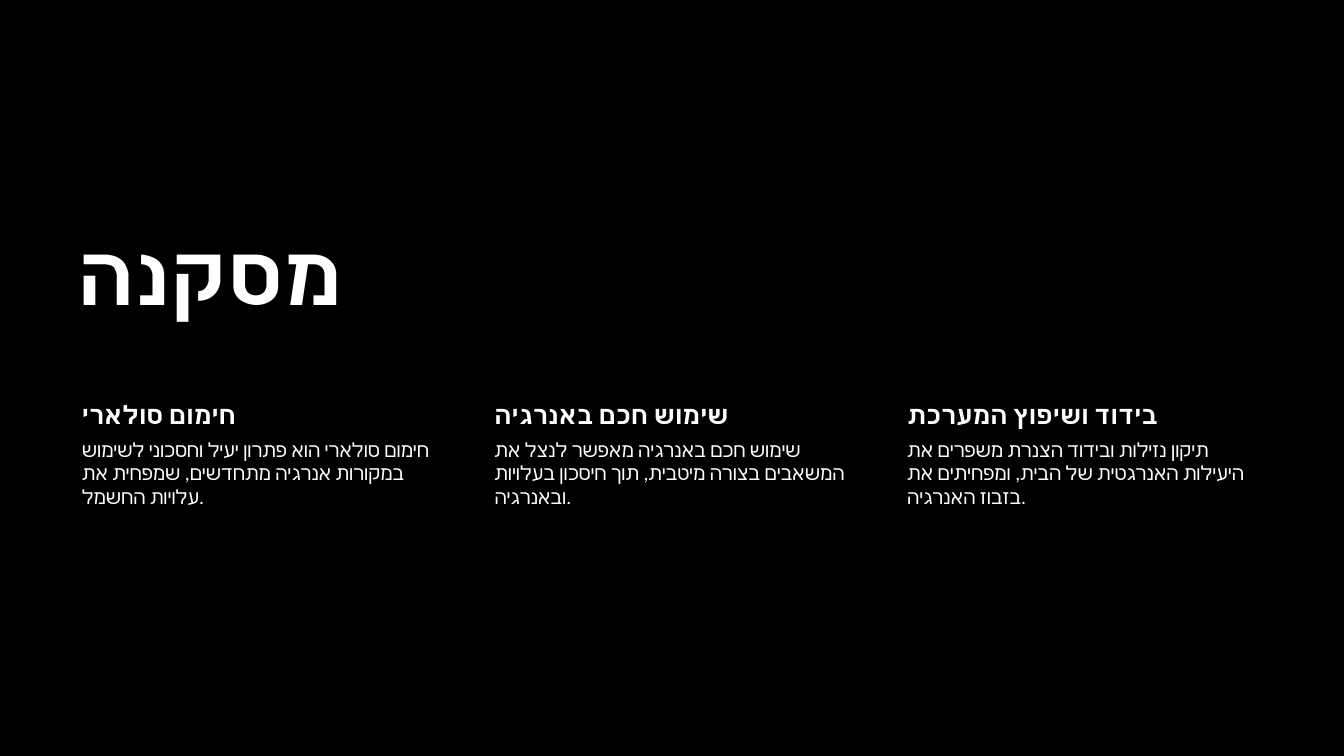
from dataclasses import dataclass

from lxml import etree
from pptx import Presentation
from pptx.dml.color import RGBColor
from pptx.enum.text import MSO_ANCHOR, MSO_AUTO_SIZE, PP_ALIGN
from pptx.oxml.ns import qn
from pptx.util import Pt

PX = 9525
BLACK = RGBColor(0x00, 0x00, 0x00)
WHITE = RGBColor(0xFF, 0xFF, 0xFF)
FONT = "Calibri"
LEFT_ALIGN = PP_ALIGN.LEFT
TOP, BOTTOM = MSO_ANCHOR.TOP, MSO_ANCHOR.BOTTOM
NO_AUTOFIT = MSO_AUTO_SIZE.NONE
TITLE_ONLY_LAYOUT = 5

COLUMN_LEFT = 64
COLUMN_PITCH = 393
COLUMN_WIDTH = 357
COLUMN_INDENT = 14


@dataclass(frozen=True)
class Box:
    left: int
    top: int
    width: int
    height: int


@dataclass(frozen=True)
class TextStyle:
    size: int
    bold: bool
    anchor: MSO_ANCHOR
    line_spacing: float


@dataclass(frozen=True)
class Conclusion:
    heading: str
    detail: str


TITLE_STYLE = TextStyle(60, True, BOTTOM, 0.9)
HEADING_STYLE = TextStyle(18, True, TOP, 1.0)
DETAIL_STYLE = TextStyle(14, False, TOP, 1.0)

CONCLUSIONS = [
    Conclusion(
        "חימום סולארי",
        "חימום סולארי הוא פתרון יעיל וחסכוני לשימוש במקורות אנרגיה מתחדשים, שמפחית את עלויות החשמל.",
    ),
    Conclusion(
        "שימוש חכם באנרגיה",
        "שימוש חכם באנרגיה מאפשר לנצל את המשאבים בצורה מיטבית, תוך חיסכון בעלויות ובאנרגיה.",
    ),
    Conclusion(
        "בידוד ושיפוץ המערכת",
        "תיקון נזילות ובידוד הצנרת משפרים את היעילות האנרגטית של הבית, ומפחיתים את בזבוז האנרגיה.",
    ),
]


def set_attributes(target, values: dict) -> None:
    for name, value in values.items():
        setattr(target, name, value)


def write_text(shape, text: str, style: TextStyle) -> None:
    frame = shape.text_frame
    set_attributes(frame, {
        "text": text,
        "word_wrap": True,
        "auto_size": NO_AUTOFIT,
        "vertical_anchor": style.anchor,
    })
    paragraph = frame.paragraphs[0]
    set_attributes(paragraph, {"alignment": LEFT_ALIGN, "line_spacing": style.line_spacing})
    font = paragraph.runs[0].font
    set_attributes(font, {"name": FONT, "size": Pt(style.size), "bold": style.bold})
    font.color.rgb = WHITE
    # Hebrew takes its typeface from the complex-script element
    properties = paragraph.runs[0]._r.get_or_add_rPr()
    etree.SubElement(properties, qn("a:cs"), typeface=FONT)


def add_title(slide, text: str, box: Box) -> None:
    title = slide.shapes.title
    set_attributes(title, {
        "left": box.left * PX,
        "top": box.top * PX,
        "width": box.width * PX,
        "height": box.height * PX,
    })
    write_text(title, text, TITLE_STYLE)


def add_column_text(slide, text: str, box: Box, style: TextStyle, inset: int) -> None:
    shape = slide.shapes.add_textbox(
        box.left * PX, box.top * PX, box.width * PX, box.height * PX
    )
    set_attributes(shape.text_frame, {
        "margin_left": COLUMN_INDENT * PX,
        "margin_top": inset * PX,
        "margin_right": inset * PX,
        "margin_bottom": inset * PX,
    })
    write_text(shape, text, style)


def main() -> None:
    presentation = Presentation()
    presentation.slide_width = 1280 * PX
    presentation.slide_height = 720 * PX
    slide = presentation.slides.add_slide(presentation.slide_layouts[TITLE_ONLY_LAYOUT])
    background = slide.background.fill
    background.solid()
    background.fore_color.rgb = BLACK

    add_title(slide, "מסקנה", Box(COLUMN_LEFT, 194, 771, 119))
    for index, conclusion in enumerate(CONCLUSIONS):
        left = COLUMN_LEFT + index * COLUMN_PITCH
        heading_box = Box(left, 377, COLUMN_WIDTH, 38)
        detail_box = Box(left, 415, COLUMN_WIDTH, 224)
        add_column_text(slide, conclusion.heading, heading_box, HEADING_STYLE, 3)
        add_column_text(slide, conclusion.detail, detail_box, DETAIL_STYLE, 2)

    presentation.save("out.pptx")


if __name__ == "__main__":
    main()
